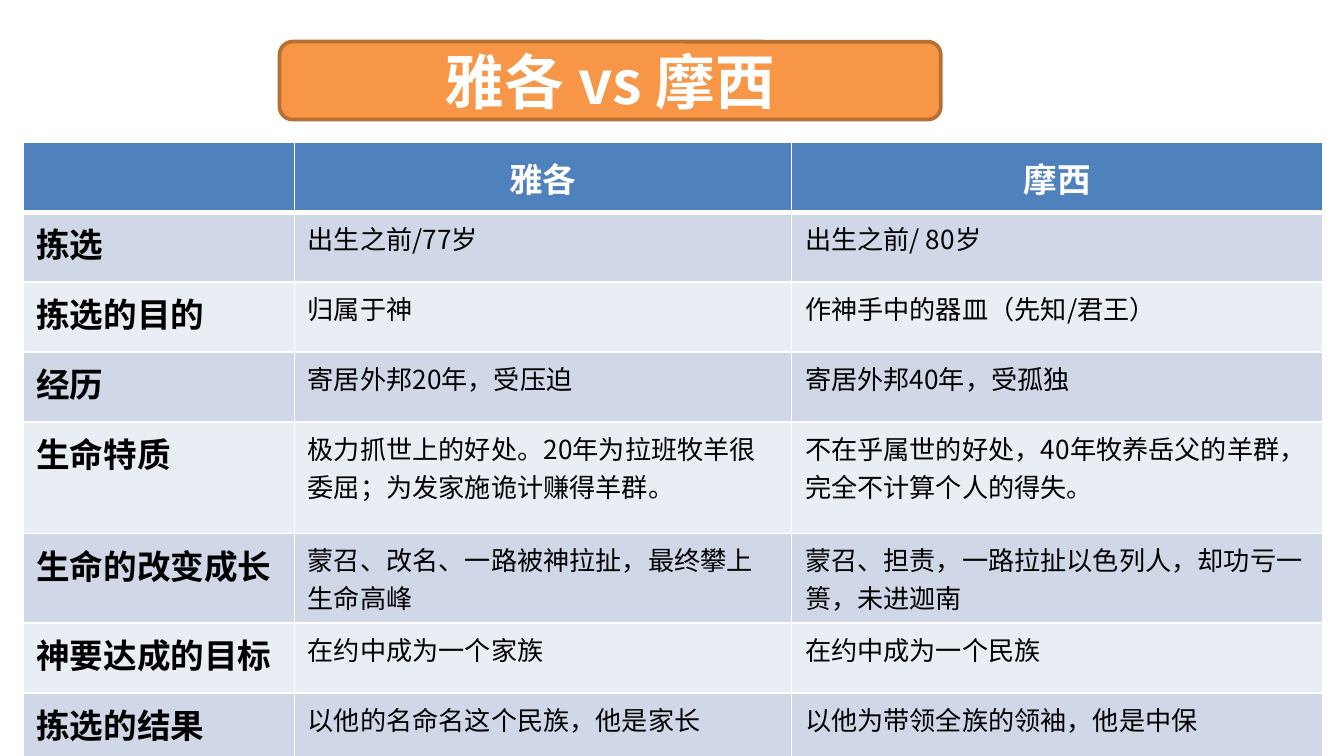
from lxml import etree
from pptx import Presentation
from pptx.dml.color import RGBColor
from pptx.enum.shapes import MSO_SHAPE
from pptx.enum.text import MSO_ANCHOR, PP_ALIGN
from pptx.oxml.ns import qn
from pptx.util import Inches, Pt

ROUNDED = MSO_SHAPE.ROUNDED_RECTANGLE
MIDDLE = MSO_ANCHOR.MIDDLE
LEFT, CENTER = PP_ALIGN.LEFT, PP_ALIGN.CENTER

COLORS = {
    "banner": "F79646",
    "banner_edge": "B76F34",
    "header": "4F81BD",
    "band_dark": "D0D8E8",
    "band_light": "E9EDF4",
    "white": "FFFFFF",
    "black": "000000",
}
CJK_FONT = "Noto Sans CJK SC"
HEADER_FONT = "Calibri"

SLIDE_WIDTH = 10
SLIDE_HEIGHT = SLIDE_WIDTH * 9 / 16
COLUMN_WIDTHS = [2.02, 3.7, 3.95]
ROW_HEIGHTS = [0.52, 0.52, 0.52, 0.52, 0.83, 0.66, 0.52, 0.52]
COMPARISON = [
    ("", "雅各", "摩西"),
    ("拣选", "出生之前/77岁", "出生之前/ 80岁"),
    ("拣选的目的", "归属于神", "作神手中的器皿（先知/君王）"),
    ("经历", "寄居外邦20年，受压迫", "寄居外邦40年，受孤独"),
    ("生命特质", "极力抓世上的好处。20年为拉班牧羊很委屈；为发家施诡计赚得羊群。",
     "不在乎属世的好处，40年牧养岳父的羊群，完全不计算个人的得失。"),
    ("生命的改变成长", "蒙召、改名、一路被神拉扯，最终攀上生命高峰",
     "蒙召、担责，一路拉扯以色列人，却功亏一篑，未进迦南"),
    ("神要达成的目标", "在约中成为一个家族", "在约中成为一个民族"),
    ("拣选的结果", "以他的名命名这个民族，他是家长", "以他为带领全族的领袖，他是中保"),
]


def rgb(name):
    return RGBColor.from_string(COLORS[name])


def write_text(frame, text, size=14, bold=False, color="black", font=CJK_FONT, align=LEFT):
    paragraph = frame.paragraphs[0]
    paragraph.alignment = align
    run = paragraph.add_run()
    run.text = text
    run.font.size = Pt(size)
    run.font.bold = bold
    run.font.color.rgb = rgb(color)
    run.font.name = font
    east_asian = etree.SubElement(run.font._element, qn("a:ea"))
    east_asian.set("typeface", CJK_FONT)


def set_borders(cell, top=1, bottom=1):
    properties = cell._tc.get_or_add_tcPr()
    for side, width in (("L", 1), ("R", 1), ("T", top), ("B", bottom)):
        line = etree.SubElement(properties, qn(f"a:ln{side}"), w=str(Pt(width)))
        fill = etree.SubElement(line, qn("a:solidFill"))
        etree.SubElement(fill, qn("a:srgbClr"), val=COLORS["white"])


def fill_cell(cell, color):
    cell.fill.solid()
    cell.fill.fore_color.rgb = rgb(color)


def add_banner(slide, text):
    banner = slide.shapes.add_shape(
        ROUNDED, Inches(2.08), Inches(0.31), Inches(4.92), Inches(0.58))
    banner.shadow.inherit = False
    banner.fill.solid()
    banner.fill.fore_color.rgb = rgb("banner")
    banner.line.color.rgb = rgb("banner_edge")
    banner.line.width = Pt(2)
    banner.text_frame.word_wrap = True
    banner.text_frame.vertical_anchor = MIDDLE
    write_text(banner.text_frame, text, size=32, bold=True, color="white", align=CENTER)


def add_comparison(slide):
    table = slide.shapes.add_table(
        len(COMPARISON), len(COLUMN_WIDTHS), Inches(0.17), Inches(1.06),
        Inches(sum(COLUMN_WIDTHS)), Inches(sum(ROW_HEIGHTS))).table
    for column, width in zip(table.columns, COLUMN_WIDTHS):
        column.width = Inches(width)
    for row, height in zip(table.rows, ROW_HEIGHTS):
        row.height = Inches(height)

    for row_index, entries in enumerate(COMPARISON):
        is_header = row_index == 0
        band = "band_dark" if row_index % 2 else "band_light"
        for column_index, text in enumerate(entries):
            cell = table.cell(row_index, column_index)
            set_borders(cell, top=3 if row_index == 1 else 1, bottom=3 if is_header else 1)
            fill_cell(cell, "header" if is_header else band)
            if not text:
                continue
            if is_header:
                cell.vertical_anchor = MIDDLE
                write_text(cell.text_frame, text, size=18, bold=True,
                           color="white", font=HEADER_FONT, align=CENTER)
            elif column_index == 0:
                write_text(cell.text_frame, text, size=18, bold=True)
            else:
                write_text(cell.text_frame, text)


def main():
    presentation = Presentation()
    presentation.slide_width = Inches(SLIDE_WIDTH)
    presentation.slide_height = Inches(SLIDE_HEIGHT)
    slide = presentation.slides.add_slide(presentation.slide_layouts[6])
    add_banner(slide, "雅各 vs 摩西")
    add_comparison(slide)
    presentation.save("out.pptx")


if __name__ == "__main__":
    main()
